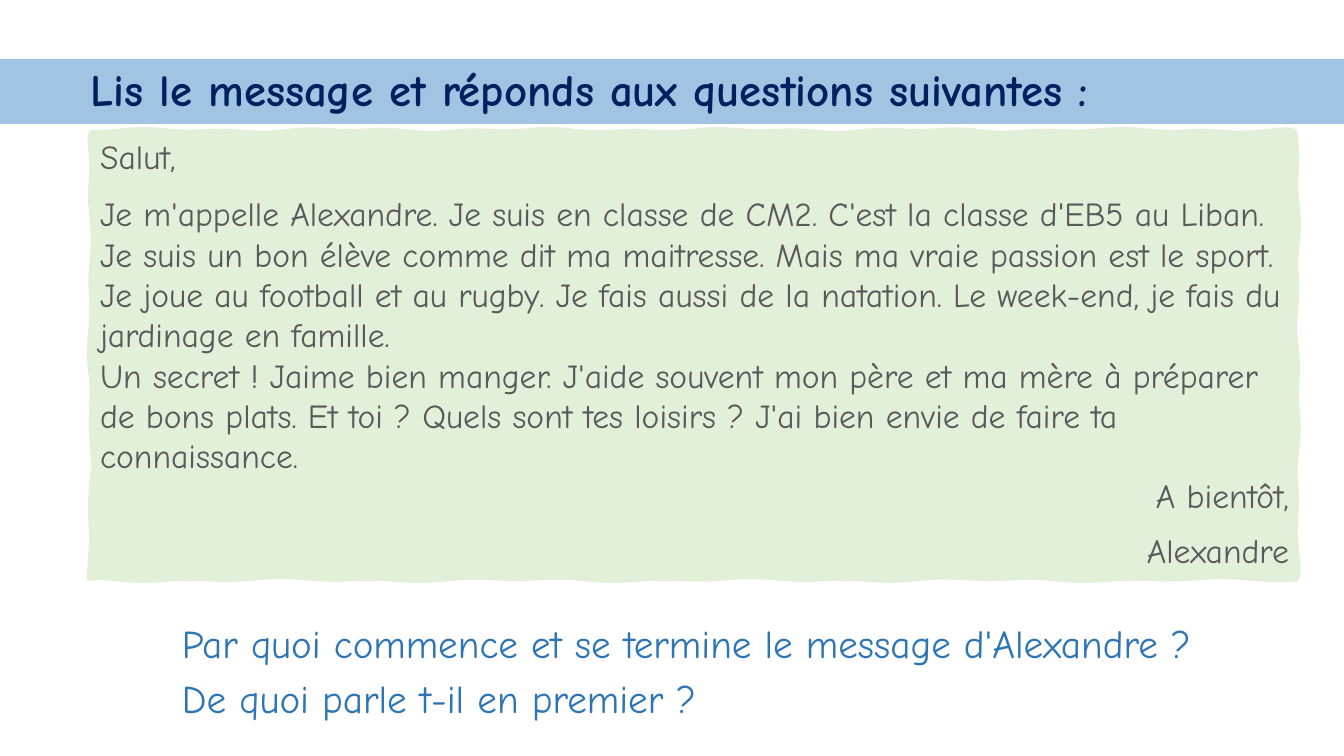
from math import sin
from pptx import Presentation
from pptx.dml.color import RGBColor
from pptx.enum.text import MSO_ANCHOR, MSO_AUTO_SIZE, PP_ALIGN
from pptx.util import Emu, Pt

LEFT, RIGHT = PP_ALIGN.LEFT, PP_ALIGN.RIGHT
TOP, MIDDLE = MSO_ANCHOR.TOP, MSO_ANCHOR.MIDDLE
FIXED = MSO_AUTO_SIZE.NONE
FONT = "Comic Neue"
COLORS = {"band": "A1C4E3", "card": "E2F0D9", "head": "002060",
          "body": "595959", "ask": "2E75B6"}


def px(n):
    return Emu(round(n * 914400 / 100.8))


def write(shape, frame, lines, size, color, bold=False):
    box = shape.text_frame
    base = {"word_wrap": True, "auto_size": FIXED, "vertical_anchor": TOP,
            "margin_left": px(10), "margin_right": px(10),
            "margin_top": px(5), "margin_bottom": px(5)}
    for key, value in {**base, **frame}.items():
        setattr(box, key, value)
    for i, (text, align, before) in enumerate(lines):
        para = box.paragraphs[0] if i == 0 else box.add_paragraph()
        para.text = text
        para.alignment = align
        para.space_before = Pt(before)
        look = {"name": FONT, "size": Pt(size), "bold": bold}
        for key, value in look.items():
            setattr(para.font, key, value)
        para.font.color.rgb = RGBColor.from_string(COLORS[color])


deck = Presentation()
deck.slide_width, deck.slide_height = px(1344), px(756)
slide = deck.slides.add_slide(deck.slide_layouts[5])

title = slide.shapes.title
place = {"left": px(0), "top": px(59), "width": px(1344), "height": px(65)}
for key, value in place.items():
    setattr(title, key, value)
title.fill.solid()
title.fill.fore_color.rgb = RGBColor.from_string(COLORS["band"])
write(title, {"vertical_anchor": MIDDLE, "margin_left": px(91)},
      [("Lis le message et réponds aux questions suivantes :", LEFT, 0)],
      32, "head", True)
title.text_frame.paragraphs[0].line_spacing = 0.9

x0, y0, x1, y1 = 91, 131, 1297, 579
across, down = range(x0, x1, 9), range(y0, y1, 8)
edge = [(x, y0 + sin(x / 13) + sin(x / 31)) for x in across]
edge += [(x1 + sin(y / 11) + sin(y / 29), y) for y in down]
edge += [(x0 + x1 - x, y1 + sin(x / 15) + sin(x / 37)) for x in across]
edge += [(x0 + sin(y / 12) + sin(y / 33), y0 + y1 - y) for y in down]
points = [(px(x), px(y)) for x, y in edge]
pen = slide.shapes.build_freeform(*points[0])
pen.add_line_segments(points[1:], close=True)
card = pen.convert_to_shape()
card.shadow.inherit = False
card.fill.solid()
for paint in (card.fill.fore_color, card.line.color):
    paint.rgb = RGBColor.from_string(COLORS["card"])
card.line.width = Pt(3)
write(card, {"margin_left": px(11), "margin_top": px(7)}, [
    ("Salut,", LEFT, 0),
    ("Je m'appelle Alexandre. Je suis en classe de CM2. C'est la classe d'EB5 "
     "au Liban. Je suis un bon élève comme dit ma maitresse. Mais ma vraie "
     "passion est le sport. Je joue au football et au rugby. Je fais aussi de "
     "la natation. Le week-end, je fais du jardinage en famille.", LEFT, 12),
    ("Un secret ! Jaime bien manger. J'aide souvent mon père et ma mère à "
     "préparer de bons plats. Et toi ? Quels sont tes loisirs ? J'ai bien "
     "envie de faire ta connaissance.", LEFT, 0),
    ("A bientôt,", RIGHT, 0),
    ("Alexandre", RIGHT, 10)], 24, "body")

asks = ["Par quoi commence et se termine le message d'Alexandre ?",
        "De quoi parle t-il en premier ?"]
for i, ask in enumerate(asks):
    box = slide.shapes.add_textbox(px(122), px(614 + 55 * i), px(1139), px(57))
    write(box, {"margin_left": px(60)}, [(ask, LEFT, 0)], 28, "ask")

deck.save("out.pptx")
